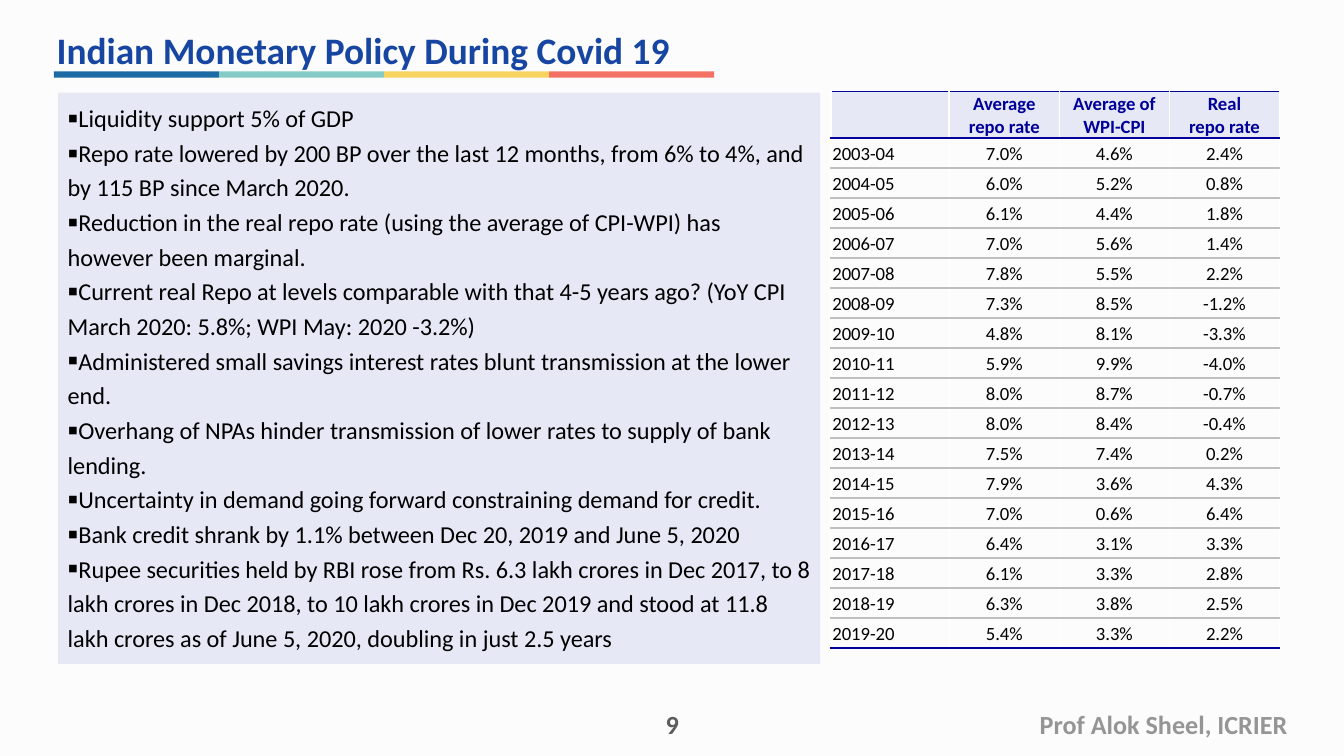
from lxml import etree
from pptx import Presentation
from pptx import util as u
from pptx.dml.color import RGBColor
from pptx.enum import shapes, text
from pptx.oxml import ns

FONT = "Calibri"
COLORS = {
    "background": "FCFCFC", "title": "1645A2", "panel": "E7E8F6",
    "body": "000000", "navy": "000099", "grid": "BFBFBF", "white": "FFFFFF",
    "page": "5C5C5C", "footer": "959595",
}
STRIPES = ["1B6AA3", "84CBC5", "F8D35E", "F47264"]
LEFT, CENTER, RIGHT = text.PP_ALIGN.LEFT, text.PP_ALIGN.CENTER, text.PP_ALIGN.RIGHT
TOP, MIDDLE, BOTTOM = text.MSO_ANCHOR.TOP, text.MSO_ANCHOR.MIDDLE, text.MSO_ANCHOR.BOTTOM

POINTS = [
    "Liquidity support 5% of GDP",
    "Repo rate lowered by 200 BP over the last 12 months, from 6% to 4%, and by 115 BP since March 2020.",
    "Reduction in the real repo rate (using the average of CPI-WPI) has however been marginal.",
    "Current real Repo at levels comparable with that 4-5 years ago? (YoY CPI March 2020: 5.8%; WPI May: 2020 -3.2%)",
    "Administered small savings interest rates blunt transmission at the lower end.",
    "Overhang of NPAs hinder transmission of lower rates to supply of bank lending.",
    "Uncertainty in demand going forward constraining demand for credit.",
    "Bank credit shrank by 1.1% between Dec 20, 2019 and June 5, 2020",
    "Rupee securities held by RBI rose from Rs. 6.3 lakh crores in Dec 2017, to 8 lakh crores in Dec 2018, "
    "to 10 lakh crores in Dec 2019 and stood at 11.8 lakh crores as of June 5, 2020, doubling in just 2.5 years",
]
HEADER = ["", "Average\nrepo rate", "Average of\nWPI-CPI", "Real\nrepo rate"]
FIRST_YEAR = 2003
RATES = [
    (7.0, 4.6, 2.4), (6.0, 5.2, 0.8), (6.1, 4.4, 1.8), (7.0, 5.6, 1.4),
    (7.8, 5.5, 2.2), (7.3, 8.5, -1.2), (4.8, 8.1, -3.3), (5.9, 9.9, -4.0),
    (8.0, 8.7, -0.7), (8.0, 8.4, -0.4), (7.5, 7.4, 0.2), (7.9, 3.6, 4.3),
    (7.0, 0.6, 6.4), (6.4, 3.1, 3.3), (6.1, 3.3, 2.8), (6.3, 3.8, 2.5),
    (5.4, 3.3, 2.2),
]


def rgb(name):
    return RGBColor.from_string(COLORS.get(name, name))


def style(p, size, color, bold=False, align=LEFT):
    p.alignment = align
    for r in p.runs:
        r.font.name = FONT
        r.font.size = u.Pt(size)
        r.font.bold = bold
        r.font.color.rgb = rgb(color)


def add_label(s, box, label, size, color, align=LEFT, anchor=MIDDLE):
    tf = s.shapes.add_textbox(*map(u.Cm, box)).text_frame
    tf.word_wrap = True
    tf.vertical_anchor = anchor
    tf.text = label
    style(tf.paragraphs[0], size, color, True, align)


def add_rect(s, box, color):
    sp = s.shapes.add_shape(shapes.MSO_SHAPE.RECTANGLE, *map(u.Cm, box))
    sp.shadow.inherit = False
    sp.fill.solid()
    sp.fill.fore_color.rgb = rgb(color)
    sp.line.fill.background()
    return sp


def add_bullet(p):
    pPr = p._p.get_or_add_pPr()
    pPr.set("marL", "0")
    pPr.set("indent", "0")
    etree.SubElement(pPr, ns.qn("a:buSzPct")).set("val", "125000")
    etree.SubElement(pPr, ns.qn("a:buFont")).set("typeface", "Arial")
    etree.SubElement(pPr, ns.qn("a:buChar")).set("char", "▪")


def add_points(s, box, points):
    tf = add_rect(s, box, "panel").text_frame
    tf.word_wrap = True
    tf.vertical_anchor = TOP
    tf.margin_left = tf.margin_right = u.Cm(0.18)
    tf.margin_top = tf.margin_bottom = u.Cm(0.1)
    tf.text = "\n".join(points)
    for p in tf.paragraphs:
        add_bullet(p)
        p.line_spacing = 1.19
        style(p, 13, "body")


def set_borders(cell, top, bottom):
    tcPr = cell._tc.get_or_add_tcPr()
    sides = [("L", "white"), ("R", "white"), ("T", top), ("B", bottom)]
    for i, (side, color) in enumerate(sides):
        ln = etree.Element(ns.qn(f"a:ln{side}"), w=str(u.Pt(1)))
        fill = etree.SubElement(ln, ns.qn("a:solidFill"))
        etree.SubElement(fill, ns.qn("a:srgbClr")).set("val", COLORS[color])
        tcPr.insert(i, ln)


def fill_cell(cell, label, header, align):
    cell.margin_left = cell.margin_right = cell.margin_top = u.Cm(0.03)
    cell.margin_bottom = 0
    cell.vertical_anchor = MIDDLE
    if header:
        cell.fill.solid()
        cell.fill.fore_color.rgb = rgb("panel")
    else:
        cell.fill.background()
    cell.text_frame.text = label
    for p in cell.text_frame.paragraphs:
        style(p, 10, "navy" if header else "body", header, align)


def add_rate_table(s, box, rows):
    last = len(rows) - 1
    table = s.shapes.add_table(len(rows), len(rows[0]), *map(u.Cm, box)).table
    table.horz_banding = False
    for column, width in zip(table.columns, [2.24, 2.08, 2.08, 2.08]):
        column.width = u.Cm(width)
    header_height = 0.87
    for i, row in enumerate(rows):
        table.rows[i].height = u.Cm(header_height if i == 0 else (box[3] - header_height) / last)
        top = "navy" if i < 2 else "grid"
        bottom = "navy" if i in (0, last) else "grid"
        for j, label in enumerate(row):
            cell = table.cell(i, j)
            fill_cell(cell, label, i == 0, CENTER if j else LEFT)
            set_borders(cell, top, bottom)


def main():
    prs = Presentation()
    prs.slide_width, prs.slide_height = u.Cm(25.4), u.Cm(14.29)
    s = prs.slides.add_slide(prs.slide_layouts[6])
    s.background.fill.solid()
    s.background.fill.fore_color.rgb = rgb("background")

    stripe_width = 3.12
    for i, color in enumerate(STRIPES):
        add_rect(s, (1.02 + i * stripe_width, 1.35, stripe_width, 0.12), color)
    add_label(s, (0.82, 0.53, 23.95, 0.81), "Indian Monetary Policy During Covid 19", 20, "title")
    add_points(s, (1.1, 1.75, 14.4, 10.8), POINTS)

    years = range(FIRST_YEAR, FIRST_YEAR + len(RATES))
    rows = [HEADER] + [
        [f"{year}-{(year + 1) % 100:02d}"] + [f"{rate:.1f}%" for rate in rates]
        for year, rates in zip(years, RATES)
    ]
    add_rate_table(s, (15.7, 1.73, 8.48, 10.51), rows)

    add_label(s, (12.07, 13.34, 1.27, 0.76), "9", 14, "page", CENTER, BOTTOM)
    add_label(s, (19.09, 13.26, 5.5, 0.86), "Prof Alok Sheel, ICRIER", 14, "footer", RIGHT, TOP)
    prs.save("out.pptx")


if __name__ == "__main__":
    main()
